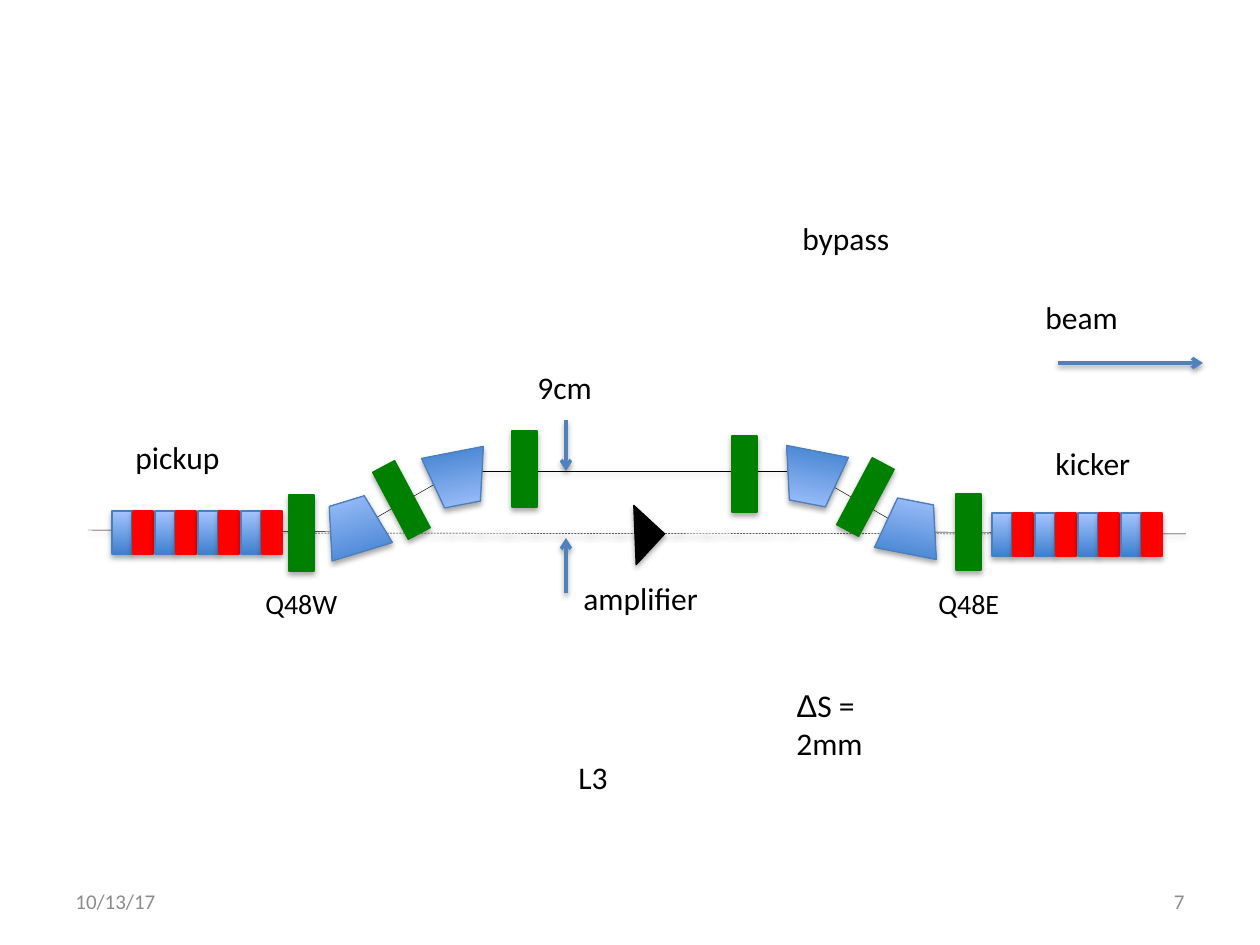
from lxml import etree
from pptx import Presentation
from pptx import util as u
from pptx.dml.color import RGBColor
from pptx.enum import dml, shapes, text
from pptx.oxml import ns

PX = 914400 / 126
COLORS = {
    "ink": "000000", "quad": "008000", "pole": "FF0000", "edge": "4B7EBC",
    "deep": "3F80CE", "pale": "A4C4FF", "arrow": "4F81BD", "footer": "8C8C8C",
}
KIND = shapes.MSO_SHAPE


def emu(*lengths):
    """Turn px lengths into EMU."""
    return [u.Emu(round(length * PX)) for length in lengths]


def rgb(name):
    """Look up a named colour."""
    return RGBColor.from_string(COLORS[name])


def apply(target, values):
    """Set attributes from a dict of format values."""
    for name, value in values.items():
        setattr(target, name, value)


def child(parent, tag, **attributes):
    """Append a drawing element with its attributes."""
    return etree.SubElement(parent, ns.qn(tag), {k: str(v) for k, v in attributes.items()})


def add_shadow(shape, distance, alpha):
    """Give a shape or connector a soft shadow below it."""
    effects = child(shape._element.spPr, "a:effectLst")
    outer = child(effects, "a:outerShdw", blurRad=40000, dist=distance, dir=5400000, rotWithShape=0)
    color = child(outer, "a:srgbClr", val=COLORS["ink"])
    child(color, "a:alpha", val=alpha)


def add_line(page, start, end, color="ink", width=0.25, dash=None, arrow=False):
    """Draw a straight line, with an arrowhead at its end if asked."""
    line = page.shapes.add_connector(shapes.MSO_CONNECTOR.STRAIGHT, *emu(*start, *end))
    line.line.color.rgb = rgb(color)
    apply(line.line, {"width": u.Pt(width), "dash_style": dash})
    if arrow:
        child(line.line._get_or_add_ln(), "a:tailEnd", type="arrow")
    add_shadow(line, 20000, 38000)


def add_part(page, kind, box, color, rotation=0, flip=None):
    """Place one beamline element; blue ones have a gradient."""
    part = page.shapes.add_shape(kind, *emu(*box))
    part.rotation = rotation
    if flip:
        part._element.spPr.xfrm.set(flip, "1")
    if color == "edge":
        part.fill.gradient()
        part.fill.gradient_angle = 90
        for stop, shade in zip(part.fill.gradient_stops, ("deep", "pale")):
            stop.color.rgb = rgb(shade)
    else:
        part.fill.solid()
        part.fill.fore_color.rgb = rgb(color)
    part.line.color.rgb = rgb(color)
    part.line.width = u.Pt(0.75)
    add_shadow(part, 23000, 35000)


def add_label(page, box, spans, size=18, color="ink", frame=None, align=None):
    """Write one line of text made of (wording, font) spans."""
    label = page.shapes.add_textbox(*emu(*box))
    apply(label.text_frame, frame or {
        "word_wrap": False, "auto_size": text.MSO_AUTO_SIZE.SHAPE_TO_FIT_TEXT})
    para = label.text_frame.paragraphs[0]
    para.alignment = align
    for wording, font in spans:
        span = para.add_run()
        span.text = wording
        apply(span.font, {"name": font, "size": u.Pt(size)})
        span.font.color.rgb = rgb(color)


def draw_paths(page, box):
    """Draw the straight beam path and the raised bypass."""
    left, top = box[:2]
    dash = dml.MSO_LINE.DASH
    for x1, y1, x2, y2, style in (
        (174, 118, 1009, 119, dash), (0, 115, 272, 117, None),
        (364, 56, 731, 56, None), (815, 112, 706, 49, None),
        (826, 117, 1098, 119, None), (272, 112, 382, 49, None),
    ):
        add_line(page, (left + x1, top + y1), (left + x2, top + y2), dash=style)


def draw_undulator(page, box):
    """Fill a box with eight alternating blue and red poles."""
    left, top, width, height = box
    pole = 20
    step = (width - pole) / 7
    for index in range(8):
        color = ("edge", "pole")[index % 2]
        add_part(page, KIND.RECTANGLE, (left + round(index * step), top, pole, height), color)


def draw_magnets(page, box):
    """Place the dipoles, quadrupoles and amplifier along the bypass."""
    left, top = box[:2]
    for x, y, rotation, flip in (
        (235, 85, 343, None), (338, 37, 349, "flipV"),
        (791, 86, 11, None), (693, 36, 11, "flipV"),
    ):
        add_part(page, KIND.TRAPEZOID, (left + x, top + y, 63, 53), "edge", rotation, flip)
    for x, y, rotation, flip in (
        (201, 80, 0, None), (868, 79, 0, None), (301, 47, 332, None),
        (765, 44, 28, "flipH"), (424, 16, 0, None), (644, 21, 0, None),
    ):
        add_part(page, KIND.RECTANGLE, (left + x, top + y, 25, 76), "quad", rotation, flip)
    add_part(page, KIND.RIGHT_TRIANGLE, (left + 526, top + 99, 42, 42), "ink", 312.7, "flipH")


def draw_labels(page, box):
    """Write the names and draw the measuring and beam arrows."""
    left, top = box[:2]
    for wording, x, y, width, size in (
        ("kicker", 955, 23, 102, 18), ("pickup", 35, 17, 111, 18),
        ("bypass", 702, -202, 113, 18), ("amplifier", 483, 158, 141, 18),
        ("L3", 478, 337, 55, 18), ("Q48W", 165, 165, 98, 16),
        ("Q48E", 838, 165, 87, 16), ("9cm", 437, -53, 81, 18),
        ("beam", 945, -123, 98, 18),
    ):
        height = 50 if size == 18 else 47
        add_label(page, (left + x, top + y, width, height), [(wording, "Calibri")], size)
    add_label(page, (left + 696, top + 265, 156, 50), [("Δ", "Arial"), ("S = 2mm", "Calibri")])
    for x1, y1, x2, y2 in ((478, 5, 478, 56), (478, 178, 478, 123), (970, -52, 1115, -52)):
        add_line(page, (left + x1, top + y1), (left + x2, top + y2), "arrow", 2, arrow=True)


def draw_footer(page, box):
    """Write the date at the left and the page number at the right."""
    left, top, width, height = box
    column = 294
    frame = {"word_wrap": True, "vertical_anchor": text.MSO_ANCHOR.MIDDLE}
    for wording, x, align in (
        ("10/13/17", left, text.PP_ALIGN.LEFT),
        ("7", left + width - column, text.PP_ALIGN.RIGHT),
    ):
        add_label(page, (x, top, column, height), [(wording, "Calibri")], 12, "footer", frame, align)


def main():
    """Build the bypass layout slide."""
    deck = Presentation()
    apply(deck, {"slide_width": u.Inches(10), "slide_height": u.Inches(7.5)})
    page = deck.slides.add_slide(deck.slide_layouts[6])
    beamline = (88, 415, 1098, 170)
    draw_paths(page, beamline)
    for left, top in ((112, 511), (992, 513)):
        draw_undulator(page, (left, top, 170, 43))
    draw_magnets(page, beamline)
    draw_labels(page, beamline)
    draw_footer(page, (63, 876, 1134, 50))
    deck.save("out.pptx")


if __name__ == "__main__":
    main()
